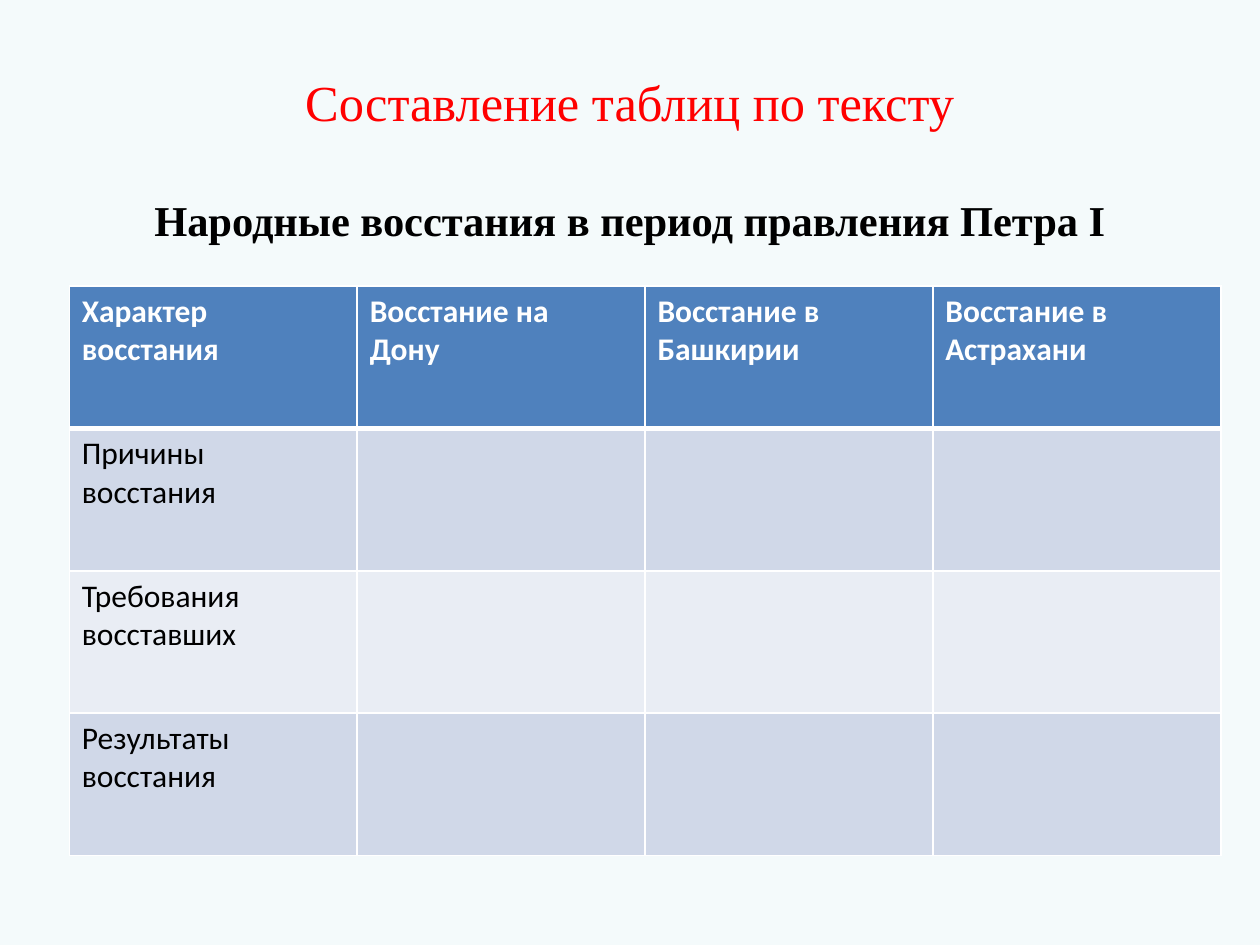
"""Build a slide with a heading and an empty comparison table on uprisings."""
from lxml.etree import SubElement as Sub
from pptx import Presentation
from pptx.dml.color import RGBColor
from pptx.enum.text import MSO_ANCHOR as Anchor, PP_ALIGN as Align
from pptx.oxml.ns import qn
from pptx.util import Pt


def paint(fill, tone):
    fill.solid()
    fill.fore_color.rgb = RGBColor.from_string(tone)


def style(font, form, tone):
    for key, val in form.items():
        setattr(font, key, val)
    font.color.rgb = RGBColor.from_string(tone)


deck = Presentation()
deck.slide_width, deck.slide_height = Pt(720), Pt(540)
slide = deck.slides.add_slide(deck.slide_layouts[6])
paint(slide.background.fill, "F4FAFB")

heads = [
    ("Составление таблиц по тексту", 28.8, False, "FF0000", 0),
    ("Народные восстания в период правления Петра I", 24.3, True, "000000", 35.5),
]
frame = slide.shapes.add_textbox(Pt(36), Pt(42), Pt(648), Pt(97)).text_frame
layout = {"word_wrap": True, "vertical_anchor": Anchor.MIDDLE,
          "margin_top": 0, "margin_bottom": 0}
for key, val in layout.items():
    setattr(frame, key, val)
for num, (text, size, bold, tone, gap) in enumerate(heads):
    para = frame.add_paragraph() if num else frame.paragraphs[0]
    para.alignment = Align.CENTER
    para.space_before = Pt(gap)
    run = para.add_run()
    run.text = text
    style(run.font, {"name": "Times New Roman", "size": Pt(size), "bold": bold}, tone)

rows = [
    ["Характер\nвосстания", "Восстание на\nДону", "Восстание в\nБашкирии",
     "Восстание в Астрахани"],
    ["Причины\nвосстания", "", "", ""],
    ["Требования\nвосставших", "", "", ""],
    ["Результаты\nвосстания", "", "", ""],
]
fills = ["4F81BD", "D0D8E8", "E9EDF4", "D0D8E8"]
wide, high = 164.52, 81.36
table = slide.shapes.add_table(4, 4, Pt(39.6), Pt(163.44), Pt(4 * wide), Pt(4 * high)).table
for col in table.columns:
    col.width = Pt(wide)
for row, texts in enumerate(rows):
    table.rows[row].height = Pt(high)
    for col, text in enumerate(texts):
        cell = table.cell(row, col)
        cell.text = text
        props = cell._tc.get_or_add_tcPr()
        for side in "LRTB":
            thick = (row, side) in [(0, "B"), (1, "T")]
            line = Sub(props, qn(f"a:ln{side}"), w=str(Pt(3 if thick else 1)))
            Sub(Sub(line, qn("a:solidFill")), qn("a:srgbClr"), val="FFFFFF")
        paint(cell.fill, fills[row])
        for para in cell.text_frame.paragraphs:
            style(para.font, {"name": "Calibri", "size": Pt(18), "bold": row == 0},
                  "000000" if row else "FFFFFF")
            for run in para.runs:
                style(run.font, {"name": "Calibri", "size": Pt(18), "bold": row == 0},
                      "000000" if row else "FFFFFF")

deck.save("out.pptx")
